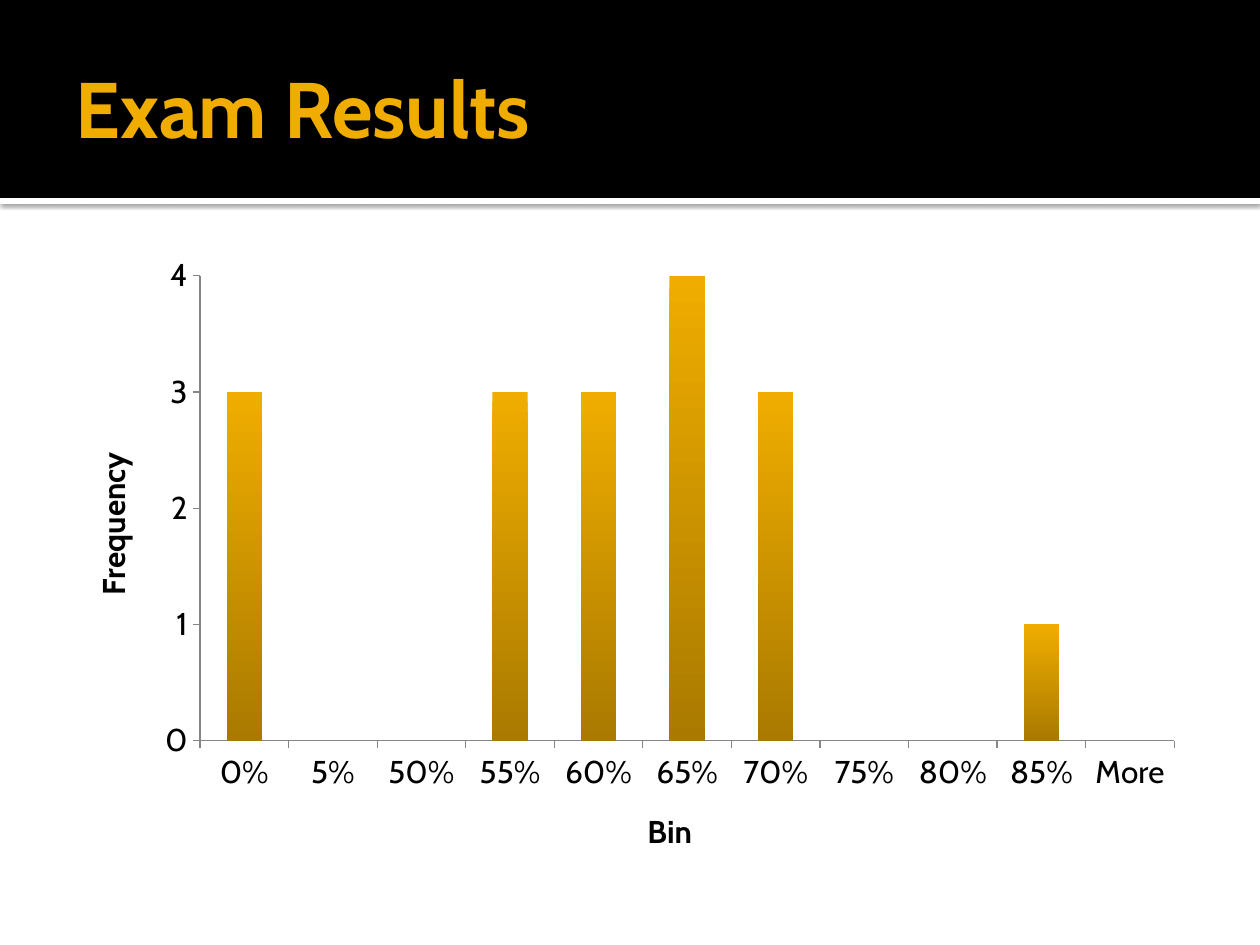
from lxml import etree
from pptx import Presentation, util as u
from pptx.chart import data as cd
from pptx.dml.color import RGBColor
from pptx.enum import chart as ch, shapes, text
from pptx.oxml import ns

BLACK = RGBColor(0x00, 0x00, 0x00)
WHITE = RGBColor(0xFF, 0xFF, 0xFF)
GOLD = RGBColor(0xF0, 0xAD, 0x00)
BROWN = RGBColor(0xAA, 0x7A, 0x00)
GREY = RGBColor(0x86, 0x86, 0x86)
FONT = "Cabin"
WIDE, HIGH = 1260, 945
BINS = ["0%", "5%", "50%", "55%", "60%", "65%", "70%", "75%", "80%", "85%", "More"]
COUNTS = [3, 0, 0, 3, 3, 4, 3, 0, 0, 1, 0]


def px(n):
    return u.Emu(round(n * 914400 / 126))


def style(font, size=18, color=BLACK, bold=False):
    font.name = FONT
    font.size = u.Pt(size)
    font.bold = bold
    font.color.rgb = color


def write(frame, words, align=text.PP_ALIGN.LEFT, **form):
    para = frame.paragraphs[0]
    para.alignment = align
    run = para.add_run()
    run.text = words
    style(run.font, **form)


def add_band(slide, box, color):
    band = slide.shapes.add_shape(shapes.MSO_SHAPE.RECTANGLE, *map(px, box))
    band.shadow.inherit = False
    band.fill.solid()
    band.fill.fore_color.rgb = color
    band.line.fill.background()
    return band


def add_shadow(shape):
    effects = shape._element.spPr.find(ns.qn("a:effectLst"))
    shade = etree.SubElement(effects, ns.qn("a:outerShdw"), blurRad=str(u.Pt(2.5)),
                             dist=str(u.Pt(0.8)), dir="5400000", algn="tl", rotWithShape="0")
    color = etree.SubElement(shade, ns.qn("a:srgbClr"), val=str(BLACK))
    etree.SubElement(color, ns.qn("a:alpha"), val="60000")


def add_header(slide, box):
    left, top, width, height = box
    add_shadow(add_band(slide, (left, top + height, width, 6), WHITE))
    add_band(slide, box, BLACK)
    title = slide.shapes.title
    slide.shapes._spTree.append(title._element)
    title.left, title.top = px(left + 63), px(top + 21)
    title.width, title.height = px(width - 126), px(height - 25)
    frame = title.text_frame
    frame.word_wrap = True
    frame.auto_size = text.MSO_AUTO_SIZE.NONE
    frame.vertical_anchor = text.MSO_ANCHOR.MIDDLE
    frame.margin_left = u.Inches(0.1)
    frame.margin_right = frame.margin_top = frame.margin_bottom = u.Inches(0.05)
    write(frame, "Exam Results", size=45, color=GOLD, bold=True)


def set_axis(axis, name):
    axis.has_major_gridlines = False
    axis.major_tick_mark = ch.XL_TICK_MARK.OUTSIDE
    axis.minor_tick_mark = ch.XL_TICK_MARK.NONE
    axis.format.line.color.rgb = GREY
    axis.format.line.width = u.Pt(0.75)
    style(axis.tick_labels.font)
    write(axis.axis_title.text_frame, name, align=text.PP_ALIGN.CENTER, bold=True)


def add_bars(slide, box):
    data = cd.CategoryChartData()
    data.categories = BINS
    data.add_series("Series 1", COUNTS)
    kind = ch.XL_CHART_TYPE.COLUMN_CLUSTERED
    chart = slide.shapes.add_chart(kind, *map(px, box), data).chart
    style(chart.font)
    chart.has_title = False
    chart.has_legend = False
    set_axis(chart.category_axis, "Bin")
    set_axis(chart.value_axis, "Frequency")
    chart.value_axis.minimum_scale = 0
    chart.value_axis.maximum_scale = 4
    chart.value_axis.major_unit = 1
    plot = chart.plots[0]
    plot.vary_by_categories = False
    plot.gap_width = 150
    fill = plot.series[0].format.fill
    fill.gradient()
    fill.gradient_angle = 270
    for stop, color in zip(fill.gradient_stops, (GOLD, BROWN)):
        stop.color.rgb = color


def main():
    deck = Presentation()
    deck.slide_width, deck.slide_height = px(WIDE), px(HIGH)
    slide = deck.slides.add_slide(deck.slide_layouts[5])
    add_header(slide, (0, 0, WIDE, 198))
    add_bars(slide, (63, 244, WIDE - 126, 638))
    deck.save("out.pptx")


if __name__ == "__main__":
    main()
